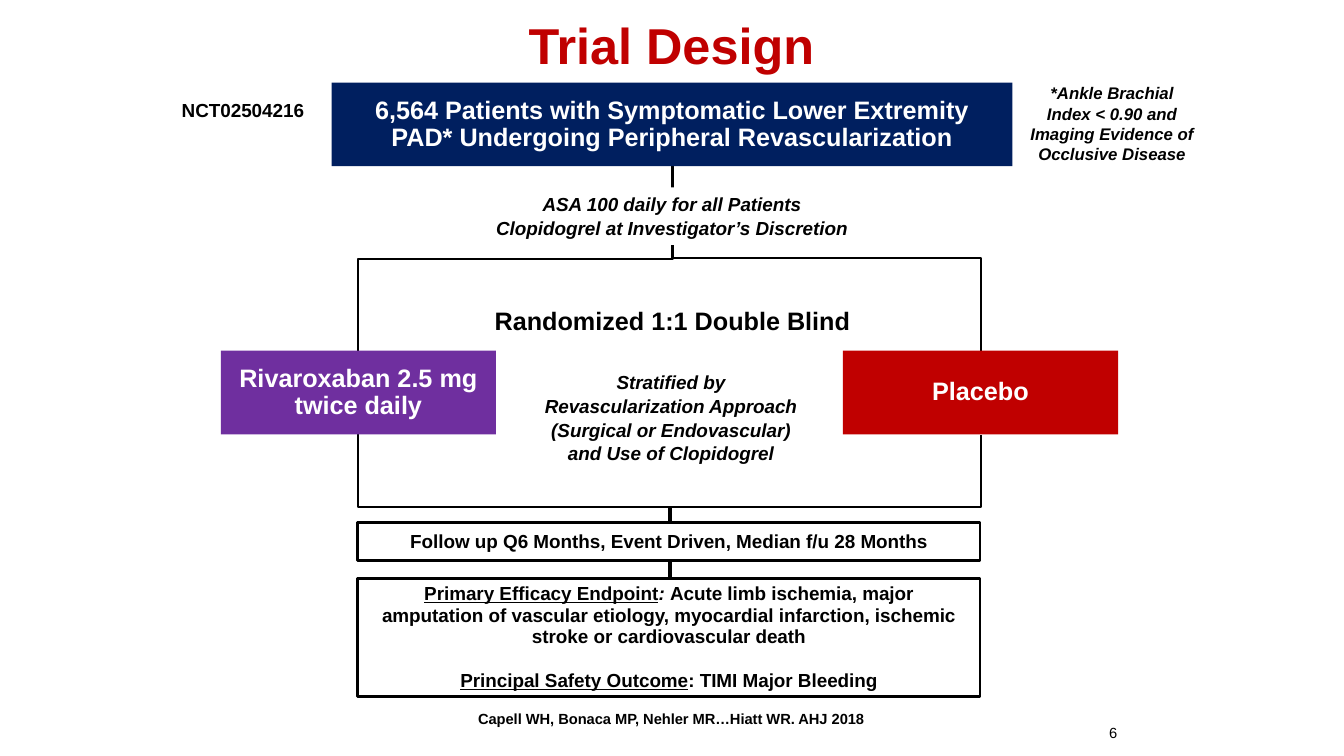
import pptx
import pptx.util
import pptx.dml.color
import pptx.enum.shapes
import pptx.enum.text

Inches, Pt = pptx.util.Inches, pptx.util.Pt
RGBColor = pptx.dml.color.RGBColor
RECTANGLE = pptx.enum.shapes.MSO_SHAPE.RECTANGLE
CENTER = pptx.enum.text.PP_ALIGN.CENTER
MIDDLE = pptx.enum.text.MSO_ANCHOR.MIDDLE

BLACK = RGBColor(0x00, 0x00, 0x00)
WHITE = RGBColor(0xFF, 0xFF, 0xFF)
NAVY = RGBColor(0x00, 0x1F, 0x5F)
PURPLE = RGBColor(0x6F, 0x2F, 0x9F)
RED = RGBColor(0xC0, 0x00, 0x00)


def write(shape, paragraphs, size, color=BLACK, bold=True, italic=False, spacing=None, gap=0):
    frame = shape.text_frame
    frame.word_wrap = True
    frame.vertical_anchor = MIDDLE
    frame.margin_left = frame.margin_right = frame.margin_top = frame.margin_bottom = 0
    for index, runs in enumerate(paragraphs):
        paragraph = frame.add_paragraph() if index else frame.paragraphs[0]
        paragraph.alignment = CENTER
        paragraph.line_spacing = spacing
        paragraph.space_before = Pt(gap if index else 0)
        for text, underline, slanted in runs:
            for part, line in enumerate(text.split("\n")):
                if part:
                    paragraph.add_line_break()
                run = paragraph.add_run()
                run.text = line
                font = run.font
                font.name, font.size, font.bold = "Arial", Pt(size), bold
                font.italic = italic or slanted
                font.underline = underline
                font.color.rgb = color


def add_box(left, top, width, height, fill, outlined=False):
    box = slide.shapes.add_shape(RECTANGLE, Inches(left), Inches(top), Inches(width), Inches(height))
    box.shadow.inherit = False
    box.fill.solid()
    box.fill.fore_color.rgb = fill
    if outlined:
        box.line.color.rgb = BLACK
        box.line.width = Pt(2)
    else:
        box.line.fill.background()
    return box


deck = pptx.Presentation()
deck.slide_width, deck.slide_height = Inches(13.33), Inches(7.5)
slide = deck.slides.add_slide(deck.slide_layouts[5])

title = slide.shapes.title
title.left, title.top, title.width, title.height = Inches(4.66), Inches(0.12), Inches(4), Inches(0.63)
write(title, [[("Trial Design", False, False)]], 36, RED)

for stem_x, stem_y, bar_y, arm_x, arm_y in [
    (6.67, 1.65, 2.57, 3.55, 3.48),
    (6.67, 1.65, 2.56, 9.73, 3.48),
    (6.64, 5.73, 5.03, 3.55, 4.31),
    (6.65, 5.74, 5.03, 9.73, 4.32),
]:
    outline = slide.shapes.build_freeform(Inches(stem_x), Inches(stem_y))
    corners = [(stem_x, bar_y), (arm_x, bar_y), (arm_x, arm_y)]
    outline.add_line_segments([(Inches(x), Inches(y)) for x, y in corners], close=False)
    branch = outline.convert_to_shape()
    branch.shadow.inherit = False
    branch.fill.background()
    branch.line.color.rgb = BLACK
    branch.line.width = Pt(1.5)

patients = add_box(3.29, 0.82, 6.75, 0.83, NAVY)
background_therapy = add_box(4.5, 1.86, 4.33, 0.57, WHITE)
rivaroxaban = add_box(2.19, 3.48, 2.73, 0.83, PURPLE)
placebo = add_box(8.36, 3.48, 2.73, 0.83, RED)
stratification = add_box(5.21, 3.62, 2.89, 1.04, WHITE)
follow_up = add_box(3.55, 5.18, 6.17, 0.38, WHITE, outlined=True)
endpoints = add_box(3.55, 5.74, 6.17, 1.17, WHITE, outlined=True)

for arm_box, label in [
    (patients, "6,564 Patients with Symptomatic Lower Extremity\nPAD* Undergoing Peripheral Revascularization"),
    (rivaroxaban, "Rivaroxaban 2.5 mg\ntwice daily"),
    (placebo, "Placebo"),
]:
    write(arm_box, [[(label, False, False)]], 18, WHITE, spacing=Pt(19.2))

write(background_therapy, [
    [("ASA 100 daily for all Patients", False, False)],
    [("Clopidogrel at Investigator’s Discretion", False, False)],
], 13.5, italic=True, gap=0.7)
write(stratification, [[(
    "Stratified by\nRevascularization Approach\n(Surgical or Endovascular)\nand Use of Clopidogrel", False, False,
)]], 13.5, italic=True, spacing=1.04)
write(follow_up, [[("Follow up Q6 Months, Event Driven, Median f/u 28 Months", False, False)]], 13.5)
write(endpoints, [
    [
        ("Primary Efficacy Endpoint", True, False),
        (": ", False, True),
        ("Acute limb ischemia, major\namputation of vascular etiology, myocardial infarction, ischemic\n"
         "stroke or cardiovascular death", False, False),
    ],
    [("Principal Safety Outcome", True, False), (": TIMI Major Bleeding", False, False)],
], 13.5, spacing=0.95, gap=16)

for left, top, width, height, note, size, bold, italic in [
    (1.71, 0.96, 1.4, 0.26, "NCT02504216", 13.5, True, False),
    (10.13, 0.81, 1.8, 0.83,
     "*Ankle Brachial\nIndex < 0.90 and\nImaging Evidence of\nOcclusive Disease", 12, True, True),
    (4.67, 3.01, 4, 0.33, "Randomized 1:1 Double Blind", 18, True, False),
    (4.16, 7.03, 5, 0.2, "Capell WH, Bonaca MP, Nehler MR…Hiatt WR. AHJ 2018", 10.5, True, False),
    (10.94, 7.17, 0.2, 0.2, "6", 10.5, False, False),
]:
    note_box = slide.shapes.add_textbox(Inches(left), Inches(top), Inches(width), Inches(height))
    write(note_box, [[(note, False, False)]], size, bold=bold, italic=italic)

deck.save("out.pptx")
